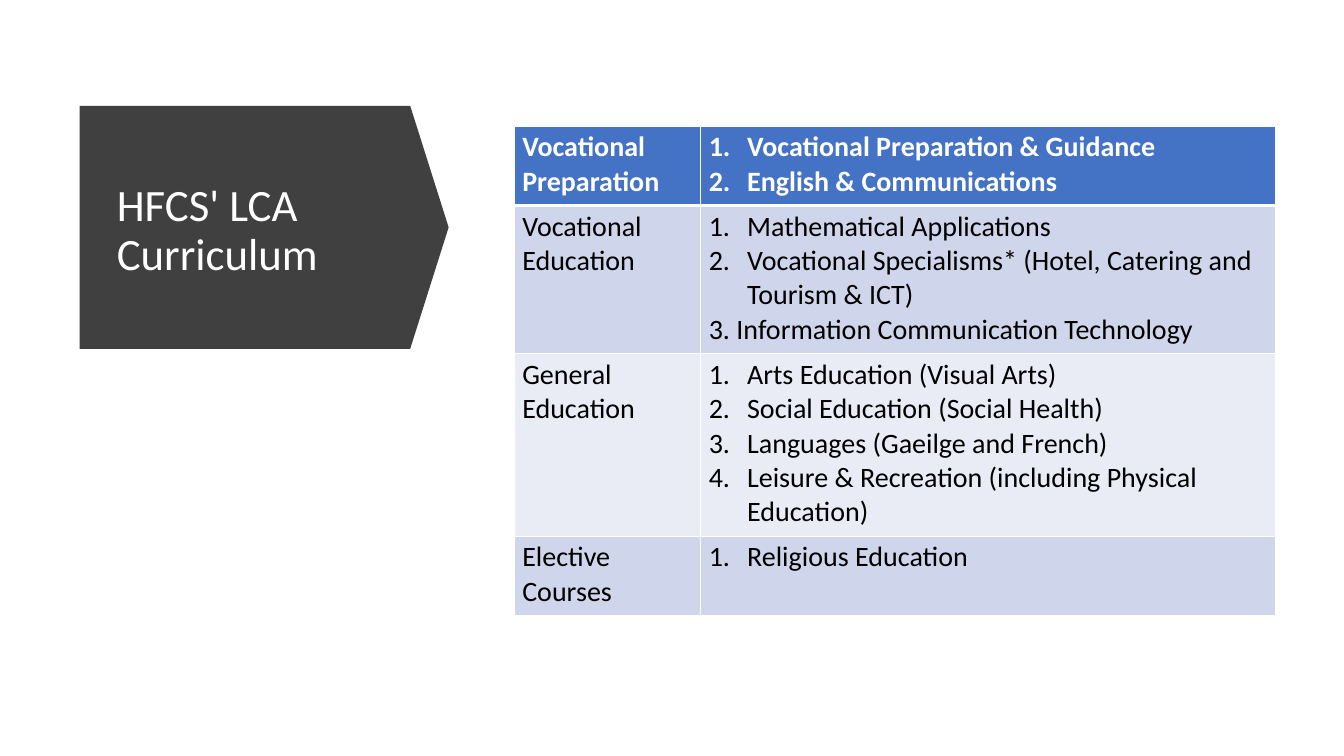
import pptx
import pptx.dml.color
import pptx.enum.shapes
import pptx.enum.text
import pptx.oxml.ns
import pptx.util
from lxml import etree

Inches = pptx.util.Inches
Pt = pptx.util.Pt

WHITE = "FFFFFF"
BLACK = "000000"
DARK_GREY = "404040"
HEADER_BLUE = "4472C4"
BANDS = ["E9EBF5", "CFD5EA"]
COLUMN_WIDTHS = [1.85, 5.7]
ROW_HEIGHTS = [0.79, 1.47, 1.81, 0.79]
CURRICULUM = [
    ("Vocational Preparation",
     ["Vocational Preparation & Guidance", "English & Communications"], []),
    ("Vocational Education",
     ["Mathematical Applications",
      "Vocational Specialisms* (Hotel, Catering and Tourism & ICT)"],
     ["3. Information Communication Technology"]),
    ("General Education",
     ["Arts Education (Visual Arts)", "Social Education (Social Health)",
      "Languages (Gaeilge and French)",
      "Leisure & Recreation (including Physical Education)"], []),
    ("Elective Courses", ["Religious Education"], []),
]


def color(value):
    """Turn a hex string into a colour."""
    return pptx.dml.color.RGBColor.from_string(value)


def add_element(parent, tag, **attributes):
    """Append a drawing element with the given attributes."""
    element = etree.SubElement(parent, pptx.oxml.ns.qn(tag))
    for name, value in attributes.items():
        element.set(name, str(value))
    return element


def add_text(paragraph, text, size, text_color, bold=False):
    """Add one formatted run to a paragraph."""
    run = paragraph.add_run()
    run.text = text
    run.font.name = "Calibri"
    run.font.size = Pt(size)
    run.font.bold = bold
    run.font.color.rgb = color(text_color)


def number_paragraph(paragraph, number):
    """Give a paragraph a hanging automatic number."""
    properties = paragraph._p.get_or_add_pPr()
    properties.set("marL", str(Inches(0.38)))
    properties.set("indent", str(-Inches(0.38)))
    add_element(properties, "a:buFont", typeface="+mj-lt")
    add_element(properties, "a:buAutoNum", type="arabicPeriod", startAt=number)


def style_cell(cell, fill, top, bottom):
    """Set the margins, white borders and fill of a cell."""
    cell.margin_left = cell.margin_right = Inches(0.08)
    cell.margin_top = cell.margin_bottom = Inches(0.04)
    properties = cell._tc.get_or_add_tcPr()
    for side, width in (("L", 1), ("R", 1), ("T", top), ("B", bottom)):
        line = add_element(properties, "a:ln" + side, w=Pt(width))
        add_element(add_element(line, "a:solidFill"), "a:srgbClr", val=WHITE)
    cell.fill.solid()
    cell.fill.fore_color.rgb = color(fill)


def fill_cell(cell, numbered, plain, text_color, bold):
    """Write numbered items and then plain lines into a cell."""
    frame = cell.text_frame
    for index, text in enumerate(numbered + plain):
        paragraph = frame.add_paragraph() if index else frame.paragraphs[0]
        if index < len(numbered):
            number_paragraph(paragraph, index + 1)
        add_text(paragraph, text, 20, text_color, bold)


def add_title_arrow(slide, left, top, width, height):
    """Draw the arrow panel pointing right, with the title on it."""
    arrow = slide.shapes.add_shape(
        pptx.enum.shapes.MSO_SHAPE.DOWN_ARROW,
        Inches(left + (width - height) / 2), Inches(top + (height - width) / 2),
        Inches(height), Inches(width))
    arrow.rotation = 270
    arrow.adjustments[0] = 1
    arrow.adjustments[1] = 0.158
    arrow.shadow.inherit = False
    arrow.fill.solid()
    arrow.fill.fore_color.rgb = color(DARK_GREY)
    arrow.line.fill.background()

    title = slide.shapes.add_textbox(
        Inches(left + 0.27), Inches(top + 0.27), Inches(2.92), Inches(1.95))
    frame = title.text_frame
    frame.word_wrap = True
    frame.vertical_anchor = pptx.enum.text.MSO_ANCHOR.MIDDLE
    frame.paragraphs[0].line_spacing = 0.9
    add_text(frame.paragraphs[0], "HFCS' LCA Curriculum", 32, WHITE)


def add_curriculum_table(slide, left, top, width, height):
    """Add the table of curriculum areas and their courses."""
    table = slide.shapes.add_table(
        len(CURRICULUM), len(COLUMN_WIDTHS),
        Inches(left), Inches(top), Inches(width), Inches(height)).table
    for column, column_width in zip(table.columns, COLUMN_WIDTHS):
        column.width = Inches(column_width)
    for index, (area, courses, extra) in enumerate(CURRICULUM):
        table.rows[index].height = Inches(ROW_HEIGHTS[index])
        header = index == 0
        text_color = WHITE if header else BLACK
        fill = HEADER_BLUE if header else BANDS[index % 2]
        area_cell, course_cell = table.cell(index, 0), table.cell(index, 1)
        for cell in (area_cell, course_cell):
            style_cell(cell, fill, 3 if index == 1 else 1, 3 if header else 1)
        fill_cell(area_cell, [], [area], text_color, header)
        fill_cell(course_cell, courses, extra, text_color, header)


def main():
    """Build the curriculum slide and save it."""
    presentation = pptx.Presentation()
    presentation.slide_width = Inches(13.33)
    presentation.slide_height = Inches(7.5)
    slide = presentation.slides.add_slide(presentation.slide_layouts[6])
    add_title_arrow(slide, 0.79, 1.05, 3.66, 2.41)
    add_curriculum_table(slide, 5.1, 1.25, sum(COLUMN_WIDTHS), sum(ROW_HEIGHTS))
    presentation.save("out.pptx")


if __name__ == "__main__":
    main()
